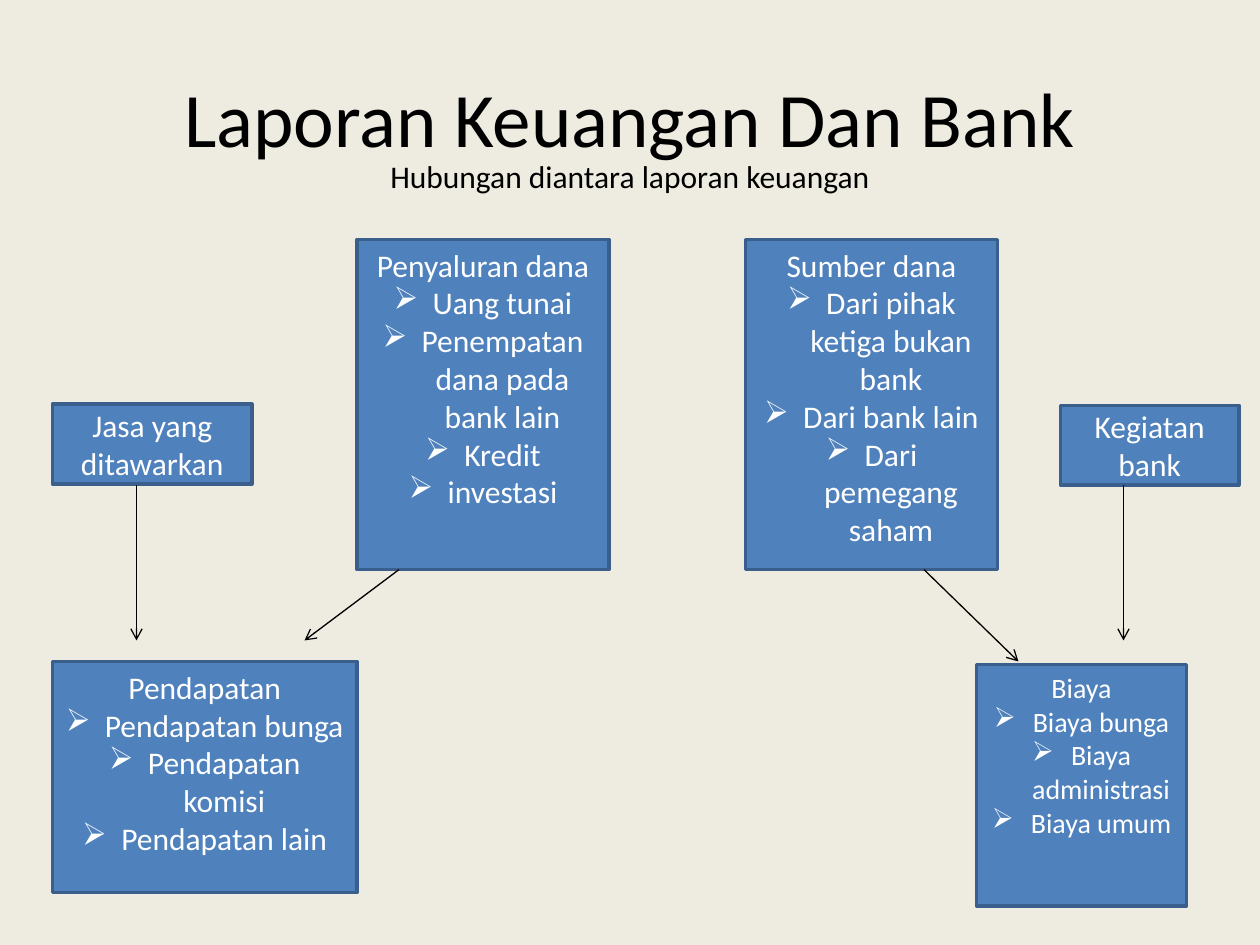
"""Build a slide relating a bank's services and funds to its income and costs."""
from lxml.etree import SubElement
from pptx import Presentation
from pptx.dml.color import RGBColor
from pptx.enum.shapes import MSO_CONNECTOR as Connector, MSO_SHAPE as Shape
from pptx.enum.text import MSO_ANCHOR as Anchor, PP_ALIGN as Align
from pptx.oxml.ns import qn
from pptx.util import Inches, Pt

BACKGROUND = RGBColor(0xEE, 0xEC, 0xE1)
BLUE = RGBColor(0x4F, 0x81, 0xBD)
BORDER = RGBColor(0x3A, 0x5F, 0x8C)
BLACK = RGBColor(0, 0, 0)
WHITE = RGBColor(0xFF, 0xFF, 0xFF)

CELLS_PER_INCH = 12
BULLET_INDENT = Inches(0.31)

FUNDS_TOP, FUNDS_HEIGHT = 22.8, 31.45
FUNDS_BOTTOM = FUNDS_TOP + FUNDS_HEIGHT
ACTIVITY_BOTTOM = 46.2
ARROW_END = 61

BOXES = [
    ((34, FUNDS_TOP, 24, FUNDS_HEIGHT), 18, "Penyaluran dana",
     ["Uang tunai", "Penempatan dana pada bank lain", "Kredit", "investasi"]),
    ((71, FUNDS_TOP, 24, FUNDS_HEIGHT), 18, "Sumber dana",
     ["Dari pihak ketiga bukan bank", "Dari bank lain", "Dari pemegang saham"]),
    ((5, 38.5, 19, 7.6), 18, "Jasa yang ditawarkan", []),
    ((5, 63, 29, 22), 18, "Pendapatan",
     ["Pendapatan bunga", "Pendapatan komisi", "Pendapatan lain"]),
    ((101, 38.6, 17, 7.6), 18, "Kegiatan bank", []),
    ((93, 63.3, 20, 23), 16, "Biaya",
     ["Biaya bunga", "Biaya administrasi", "Biaya umum"]),
]

ARROWS = [
    ((38, FUNDS_BOTTOM), (29, ARROW_END)),
    ((13, ACTIVITY_BOTTOM), (13, ARROW_END)),
    ((88, FUNDS_BOTTOM), (97, 63)),
    ((107, ACTIVITY_BOTTOM), (107, ARROW_END)),
]


def grid(*cells):
    return [Inches(cell / CELLS_PER_INCH) for cell in cells]


def write(paragraph, wording, size, color):
    paragraph.alignment = Align.CENTER
    run = paragraph.add_run()
    run.text = wording
    formats = {"name": "Calibri", "size": Pt(size)}
    for attribute, value in formats.items():
        setattr(run.font, attribute, value)
    run.font.color.rgb = color


def add_bullet(paragraph):
    properties = paragraph._p.get_or_add_pPr()
    properties.set("marL", str(BULLET_INDENT))
    properties.set("indent", str(-BULLET_INDENT))
    SubElement(properties, qn("a:buChar"), char="➢")


def add_title(slide, wording):
    title = slide.shapes.title
    place = {"left": 0.5, "top": 0.3, "width": 9, "height": 1.25}
    for attribute, inches in place.items():
        setattr(title, attribute, Inches(inches))
    title.text_frame.vertical_anchor = Anchor.MIDDLE
    write(title.text_frame.paragraphs[0], wording, 44, BLACK)


def add_subtitle(slide, wording):
    place = [Inches(length) for length in (0, 1.2, 10, 6.3)]
    frame = slide.shapes.add_textbox(*place).text_frame
    frame.word_wrap = True
    write(frame.paragraphs[0], wording, 18, BLACK)


def add_box(slide, cells, size, heading, items):
    box = slide.shapes.add_shape(Shape.RECTANGLE, *grid(*cells))
    box.shadow.inherit = False
    box.fill.solid()
    box.fill.fore_color.rgb = BLUE
    box.line.color.rgb = BORDER
    box.line.width = Pt(2)
    frame = box.text_frame
    frame.word_wrap = True
    frame.vertical_anchor = Anchor.TOP if items else Anchor.MIDDLE
    write(frame.paragraphs[0], heading, size, WHITE)
    for item in items:
        paragraph = frame.add_paragraph()
        add_bullet(paragraph)
        write(paragraph, item, size, WHITE)


def add_arrow(slide, start, end):
    arrow = slide.shapes.add_connector(Connector.STRAIGHT, *grid(*start, *end))
    arrow.line.color.rgb = BLACK
    arrow.line.width = Pt(0.75)
    SubElement(arrow.line._get_or_add_ln(), qn("a:tailEnd"), type="arrow")
    SubElement(arrow._element.spPr, qn("a:effectLst"))


def main():
    deck = Presentation()
    deck.slide_width, deck.slide_height = Inches(10), Inches(7.5)
    slide = deck.slides.add_slide(deck.slide_layouts[5])
    slide.background.fill.solid()
    slide.background.fill.fore_color.rgb = BACKGROUND
    add_title(slide, "Laporan Keuangan Dan Bank")
    add_subtitle(slide, "Hubungan diantara laporan keuangan")
    for box in BOXES:
        add_box(slide, *box)
    for start, end in ARROWS:
        add_arrow(slide, start, end)
    deck.save("out.pptx")


if __name__ == "__main__":
    main()
